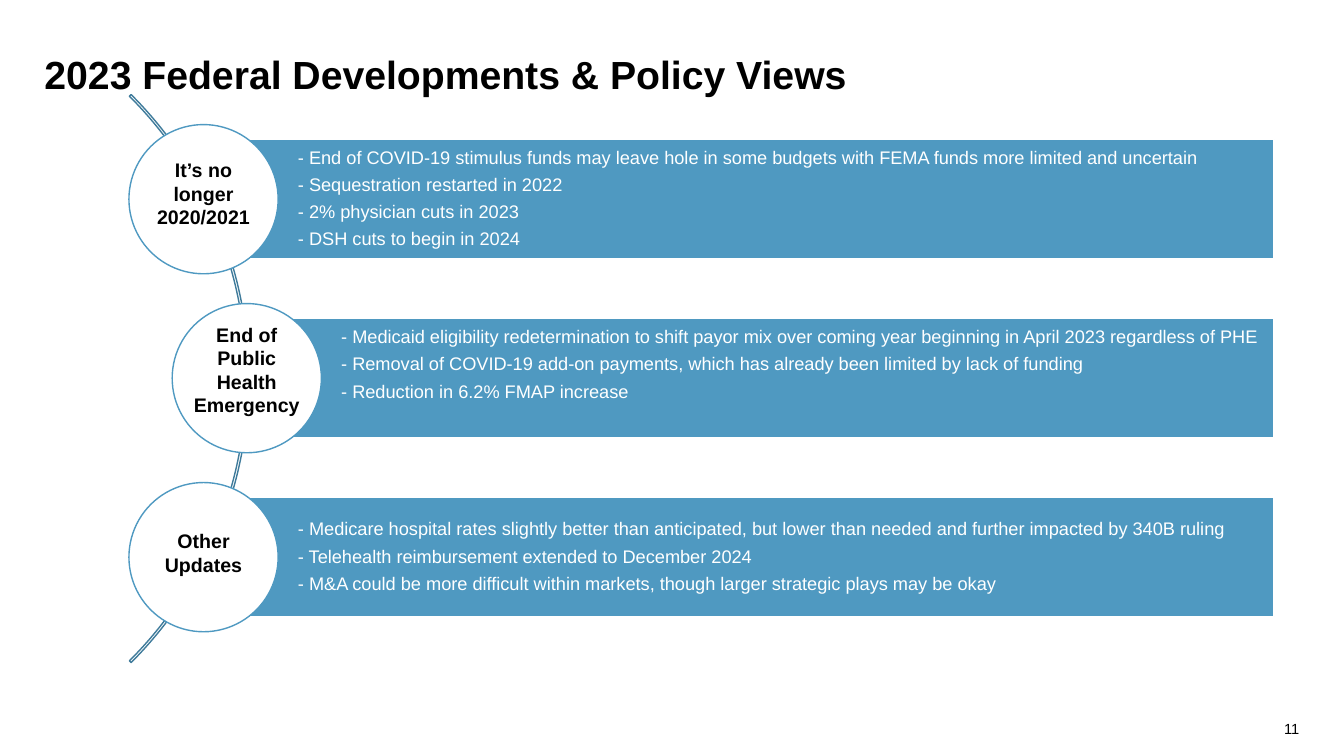
from pptx import Presentation
from pptx.dml.color import RGBColor
from pptx.enum.shapes import MSO_SHAPE
from pptx.enum.text import MSO_ANCHOR, PP_ALIGN
from pptx.util import Cm, Pt

TITLE = "2023 Federal Developments & Policy Views"
PAGE = "11"
TOPICS = [
    dict(label="It’s no longer 2020/2021", mid=5.13, top=3.99, spare=0, points=[
        "- End of COVID-19 stimulus funds may leave hole in some budgets with FEMA funds more limited and uncertain",
        "- Sequestration restarted in 2022",
        "- 2% physician cuts in 2023",
        "- DSH cuts to begin in 2024",
    ]),
    dict(label="End of Public Health Emergency", mid=6.22, top=8.13, spare=1, points=[
        "- Medicaid eligibility redetermination to shift payor mix over coming year beginning in April 2023 regardless of PHE",
        "- Removal of COVID-19 add-on payments, which has already been limited by lack of funding",
        "- Reduction in 6.2% FMAP increase",
    ]),
    dict(label="Other Updates", mid=5.13, top=13.34, spare=0, points=[
        "- Medicare hospital rates slightly better than anticipated, but lower than needed and further impacted by 340B ruling",
        "- Telehealth reimbursement extended to December 2024",
        "- M&A could be more difficult within markets, though larger strategic plays may be okay",
    ]),
]
HUES = {"blue": "4F99C1", "arc": "3F7B9B", "white": "FFFFFF", "black": "000000"}
FIRST, PITCH = 5.02, 4.51
BALL, BAR, RIGHT = 3.76, 3.0, 32.11
LABEL, ROW = 2.8, 0.66


def hue(name):
    return RGBColor.from_string(HUES[name])


def write(frame, lines, size, color, bold=False, align=PP_ALIGN.LEFT,
          anchor=MSO_ANCHOR.TOP, pads=(0, 0, 0, 0), lead=1.0, gap=0):
    frame.word_wrap = True
    frame.vertical_anchor = anchor
    (frame.margin_left, frame.margin_top,
     frame.margin_right, frame.margin_bottom) = [Cm(pad) for pad in pads]
    frame.text = "\n".join(lines)
    for para in frame.paragraphs:
        para.alignment = align
        para.line_spacing = lead
        para.space_before = Pt(0)
        para.space_after = Pt(gap)
        for run in para.runs:
            run.font.name = "Arial"
            run.font.size = Pt(size)
            run.font.bold = bold
            run.font.color.rgb = hue(color)


def draw(kind, box, fill, line):
    shape = slide.shapes.add_shape(kind, *[Cm(side) for side in box])
    shape.shadow.inherit = False
    if fill:
        shape.fill.solid()
        shape.fill.fore_color.rgb = hue(fill)
    else:
        shape.fill.background()
    shape.line.color.rgb = hue(line)
    shape.line.width = Pt(1)
    return shape


def text(box):
    return slide.shapes.add_textbox(*[Cm(side) for side in box]).text_frame


deck = Presentation()
deck.slide_width, deck.slide_height = Cm(33.87), Cm(19.05)
slide = deck.slides.add_slide(deck.slide_layouts[5])

head = slide.shapes.title
head.left, head.top, head.width, head.height = Cm(1.12), Cm(0.51), Cm(32.26), Cm(2.87)
write(head.text_frame, [TITLE], 28, "black", bold=True,
      anchor=MSO_ANCHOR.MIDDLE, pads=(0, 0.13, 0.25, 0.13), lead=0.9)

write(text((31.17, 17.55, 1.57, 1.04)), [PAGE], 10.5, "black",
      align=PP_ALIGN.RIGHT, anchor=MSO_ANCHOR.BOTTOM, pads=(0.25, 0, 0, 0))

arc = draw(MSO_SHAPE.BLOCK_ARC, (-13.97, -0.58, 20.24, 20.24), None, "arc")
for spot, value in enumerate((189, 27, 0.003)):
    arc.adjustments[spot] = value

for rank, topic in enumerate(TOPICS):
    mid, level = topic["mid"], FIRST + rank * PITCH
    bar = draw(MSO_SHAPE.RECTANGLE, (mid, level - BAR / 2, RIGHT - mid, BAR), "blue", "white")
    write(bar.text_frame, topic["points"], 13, "white", anchor=MSO_ANCHOR.MIDDLE,
          pads=(2.38, 0.1, 0.1, 0.1 + topic["spare"] * ROW), lead=0.9, gap=5.3)
    draw(MSO_SHAPE.OVAL, (mid - BALL / 2, level - BALL / 2, BALL, BALL), "white", "blue")
    write(text((mid - LABEL / 2, topic["top"], LABEL, 2.4)), [topic["label"]],
          14, "black", bold=True, align=PP_ALIGN.CENTER)

deck.save("out.pptx")
